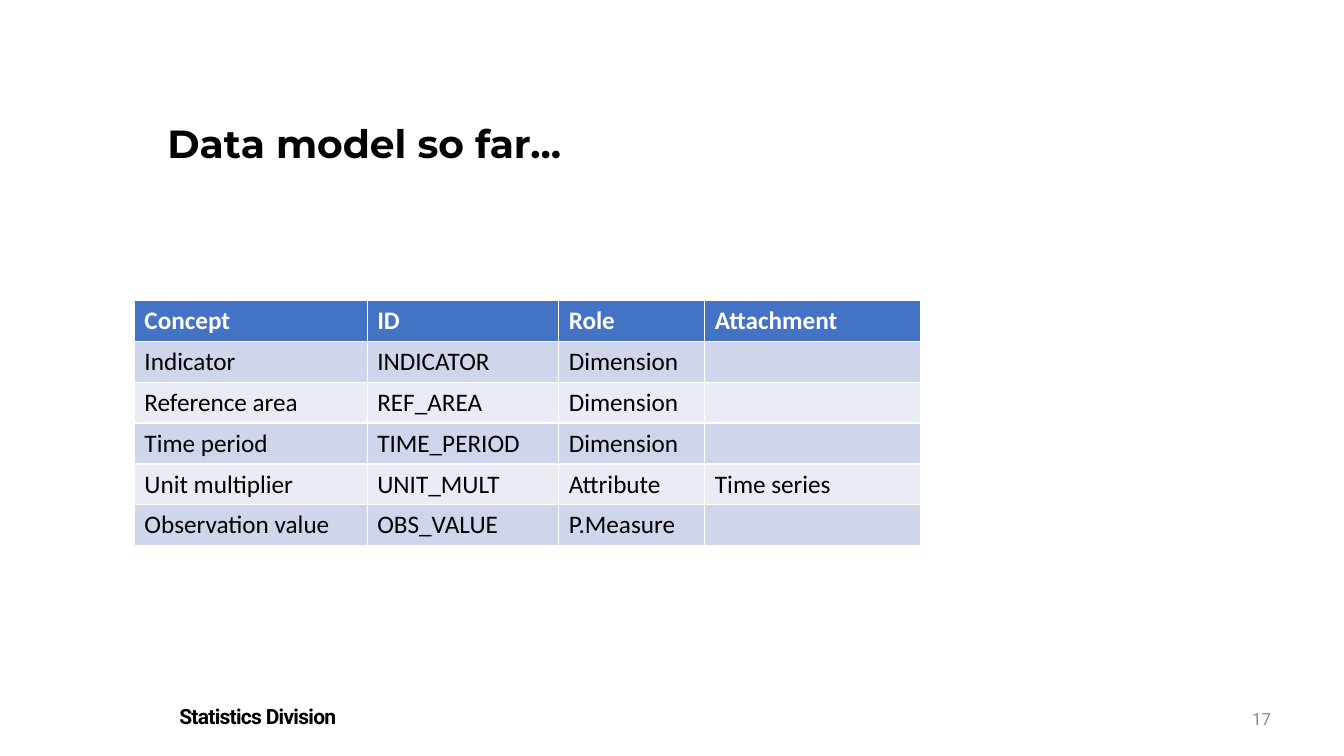
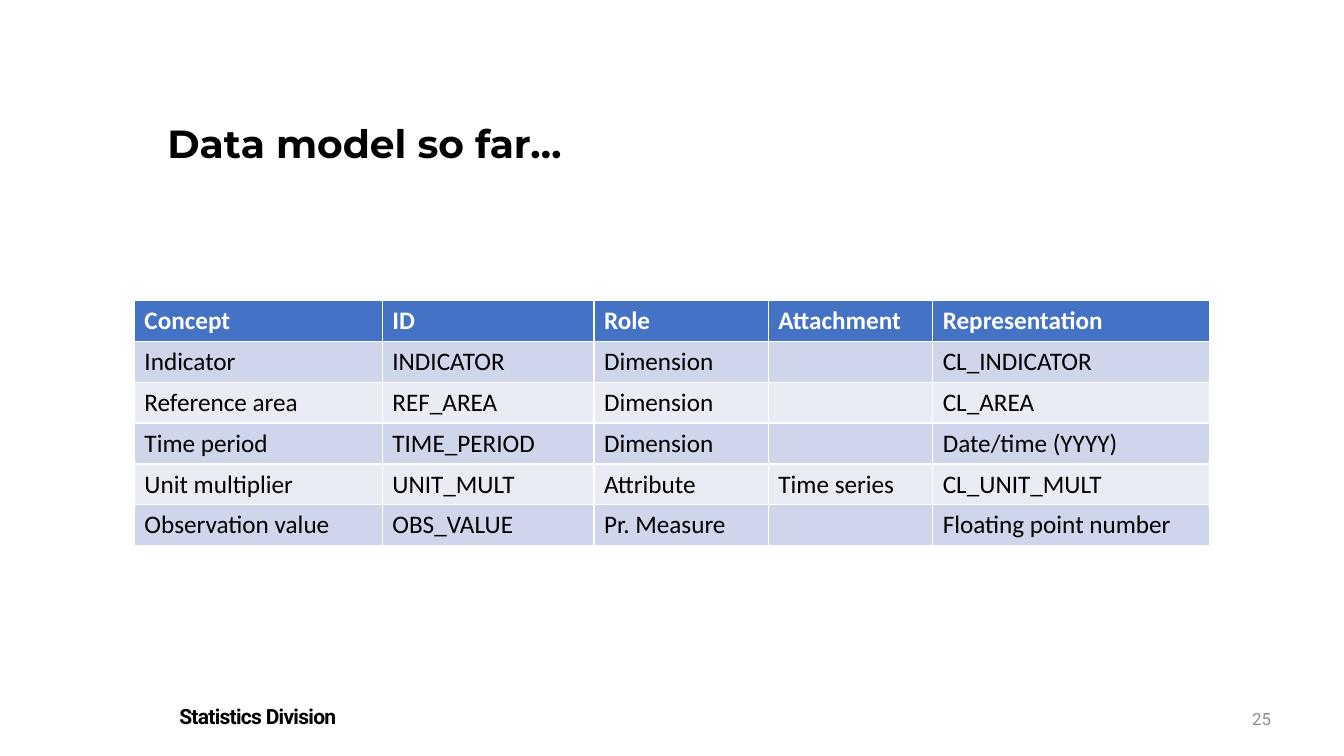
import pptx
import pptx.dml.color
import pptx.enum.text
import pptx.util

Pt = pptx.util.Pt
RGBColor = pptx.dml.color.RGBColor
ALIGN = pptx.enum.text.PP_ALIGN
ANCHOR = pptx.enum.text.MSO_ANCHOR

# Shared colours
WHITE = RGBColor(0xFF, 0xFF, 0xFF)
BLACK = RGBColor(0, 0, 0)
GREY = RGBColor(0x8C, 0x8C, 0x8C)
HEADER_BLUE = RGBColor(0x44, 0x72, 0xC4)
BANDS = (RGBColor(0xCF, 0xD5, 0xEA), RGBColor(0xE9, 0xEB, 0xF5))

# Shared boxes: left, top, width, height in points
TITLE_BOX = (112.3, 85.7, 782, 65.5)
FOOTER_BOX = (121, 499, 420.5, 25)
NUMBER_BOX = (869, 499, 46, 28.8)
TABLE_CORNER = (96, 214.6)
ROW_HEIGHT = 29.2

# Slide contents: title, page number, column widths, rows
SLIDES = (
    ("Data model so far...", "17", (166.3, 136.8, 104.4, 154.3), (
        ("Concept", "ID", "Role", "Attachment"),
        ("Indicator", "INDICATOR", "Dimension", ""),
        ("Reference area", "REF_AREA", "Dimension", ""),
        ("Time period", "TIME_PERIOD", "Dimension", ""),
        ("Unit multiplier", "UNIT_MULT", "Attribute", "Time series"),
        ("Observation value", "OBS_VALUE", "P.Measure", ""),
    )),
    ("Data model so far…", "25", (177.1, 151.2, 124.6, 117.4, 198), (
        ("Concept", "ID", "Role", "Attachment", "Representation"),
        ("Indicator", "INDICATOR", "Dimension", "", "CL_INDICATOR"),
        ("Reference area", "REF_AREA", "Dimension", "", "CL_AREA"),
        ("Time period", "TIME_PERIOD", "Dimension", "", "Date/time (YYYY)"),
        ("Unit multiplier", "UNIT_MULT", "Attribute", "Time series",
         "CL_UNIT_MULT"),
        ("Observation value", "OBS_VALUE", "Pr. Measure", "",
         "Floating point number"),
    )),
)


def set_font(para, name, size, color, bold=False):
    font = para.font
    font.name, font.size, font.bold = name, Pt(size), bold
    font.color.rgb = color


def add_title(page, bounds, text):
    box = page.shapes.title
    box.left, box.top, box.width, box.height = map(Pt, bounds)
    frame = box.text_frame
    frame.text = text
    frame.vertical_anchor = ANCHOR.TOP
    frame.auto_size = pptx.enum.text.MSO_AUTO_SIZE.NONE
    para = frame.paragraphs[0]
    para.alignment = ALIGN.LEFT
    para.line_spacing = 0.9
    set_font(para, "Montserrat", 28, BLACK, bold=True)


def add_label(page, bounds, text, size, color, bold=False):
    """Place one line of Roboto text and return its box and paragraph."""
    box = page.shapes.add_textbox(*map(Pt, bounds))
    box.text_frame.word_wrap = True
    para = box.text_frame.paragraphs[0]
    para.text = text
    set_font(para, "Roboto", size, color, bold)
    return box, para


def add_footer(page, footer_bounds, number_bounds, number):
    # Division name, slightly condensed
    box, para = add_label(page, footer_bounds, "Statistics Division", 15,
                          BLACK, bold=True)
    box.fill.solid()
    box.fill.fore_color.rgb = WHITE
    para.runs[0].font._element.set("spc", "-50")

    # Page number
    box, para = add_label(page, number_bounds, number, 12, GREY)
    box.text_frame.vertical_anchor = ANCHOR.MIDDLE
    para.alignment = ALIGN.RIGHT


def add_model_table(page, corner, widths, rows):
    """Draw a header row and banded body; the table style rules it in white."""
    left, top = corner
    table = page.shapes.add_table(
        len(rows), len(widths), Pt(left), Pt(top),
        Pt(sum(widths)), Pt(ROW_HEIGHT * len(rows))).table
    for column, width in zip(table.columns, widths):
        column.width = Pt(width)
    for row_index, texts in enumerate(rows):
        is_header = row_index == 0
        fill = HEADER_BLUE if is_header else BANDS[(row_index - 1) % 2]
        table.rows[row_index].height = Pt(ROW_HEIGHT)
        for column_index, text in enumerate(texts):
            cell = table.cell(row_index, column_index)
            cell.text = text
            cell.fill.solid()
            cell.fill.fore_color.rgb = fill
            set_font(cell.text_frame.paragraphs[0], "Calibri", 18,
                     WHITE if is_header else BLACK, bold=is_header)


def add_model_slide(deck, title, number, widths, rows):
    page = deck.slides.add_slide(deck.slide_layouts.get_by_name("Title Only"))
    add_footer(page, FOOTER_BOX, NUMBER_BOX, number)
    add_title(page, TITLE_BOX, title)
    add_model_table(page, TABLE_CORNER, widths, rows)


def main():
    deck = pptx.Presentation()
    deck.slide_width, deck.slide_height = Pt(960), Pt(540)
    for content in SLIDES:
        add_model_slide(deck, *content)
    deck.save("out.pptx")


if __name__ == "__main__":
    main()
